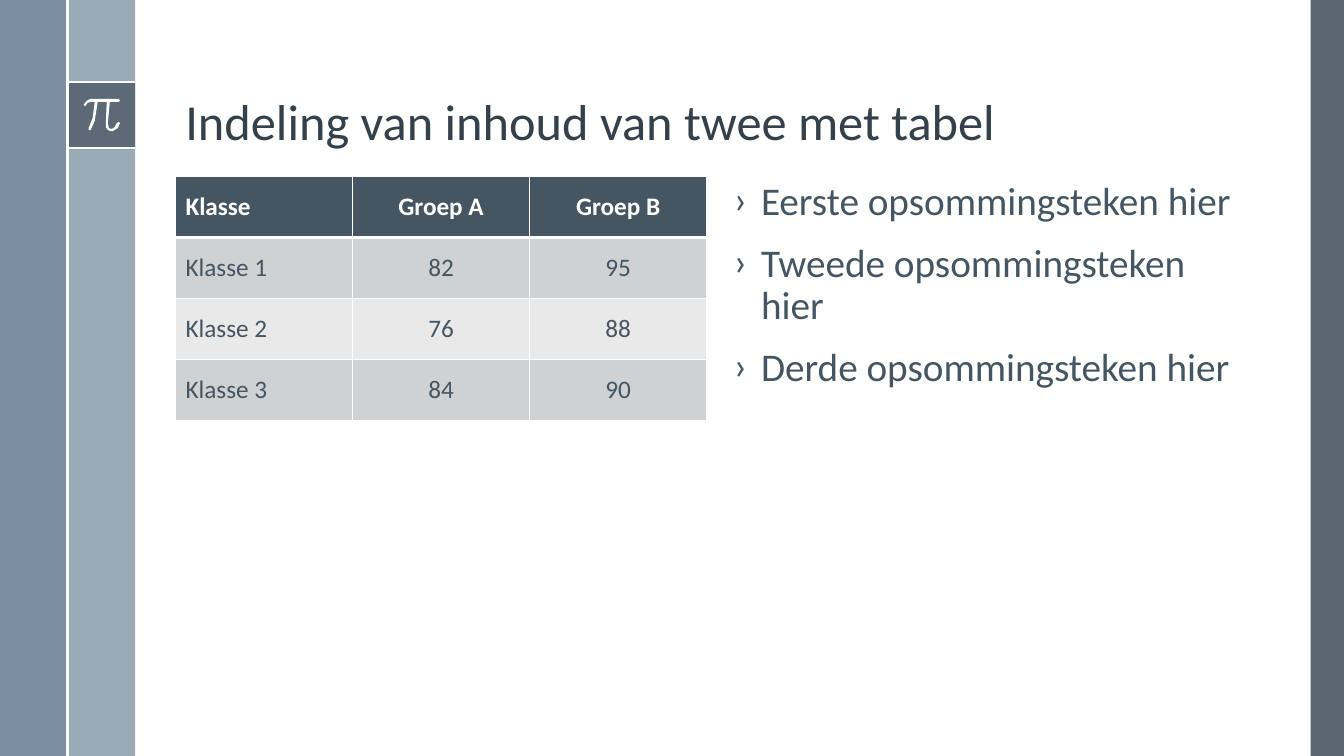
from lxml.etree import SubElement
from pptx import Presentation
from pptx.dml.color import RGBColor
from pptx.enum.shapes import MSO_CONNECTOR as Connector, MSO_SHAPE as Shape
from pptx.enum.text import MSO_ANCHOR as Anchor, PP_ALIGN as Align
from pptx.oxml.ns import qn
from pptx.util import Inches, Pt

WHITE = RGBColor(0xFF, 0xFF, 0xFF)
SLATE = RGBColor(0x47, 0x55, 0x62)
STEEL = RGBColor(0x6A, 0x80, 0x93)
MIST = RGBColor(0x9B, 0xAA, 0xB7)
TITLE = RGBColor(0x35, 0x40, 0x4A)
TEXT = RGBColor(0x46, 0x55, 0x62)
BAND_DARK = RGBColor(0xCF, 0xD1, 0xD3)
BAND_LIGHT = RGBColor(0xE9, 0xE9, 0xEA)

WIDTH, HEIGHT = 13.33, 7.5
STRIP = 0.67
SIGN_TOP = 0.81
CONTENT_LEFT, CONTENT_TOP, COLUMN_WIDTH = 1.74, 1.75, 5.27
BODY_LEFT = 7.18

PI_OUTLINE = [
    (1.18, 0.98), (0.9, 0.98), (0.86, 1), (0.83, 1.04), (0.84, 1.05),
    (0.85, 1.05), (0.87, 1.02), (0.9, 1.01), (0.94, 1.01), (0.92, 1.17),
    (0.88, 1.27), (0.88, 1.29), (0.9, 1.29), (0.94, 1.2), (0.97, 1.01),
    (1.06, 1.01), (1.05, 1.22), (1.05, 1.26), (1.07, 1.29), (1.1, 1.3),
    (1.12, 1.3), (1.17, 1.27), (1.19, 1.22), (1.18, 1.21), (1.16, 1.22),
    (1.14, 1.26), (1.11, 1.28), (1.08, 1.27), (1.07, 1.22), (1.09, 1.01),
    (1.18, 1.01), (1.19, 1),
]

SCORES = [
    ("Klasse", "Groep A", "Groep B"),
    ("Klasse 1", "82", "95"),
    ("Klasse 2", "76", "88"),
    ("Klasse 3", "84", "90"),
]

BULLETS = [
    "Eerste opsommingsteken hier",
    "Tweede opsommingsteken hier",
    "Derde opsommingsteken hier",
]


class SlideBuilder:
    font = "Calibri"

    def __init__(self, slide):
        self.slide = slide

    def paint(self, shape, color, opacity=100):
        shape.shadow.inherit = False
        shape.fill.solid()
        shape.fill.fore_color.rgb = color
        shape.line.fill.background()
        if opacity < 100:
            fill = shape.element.spPr.find(qn("a:solidFill"))
            SubElement(fill[0], qn("a:alpha"), val=str(opacity * 1000))

    def rectangle(self, left, top, width, height, color, opacity=100):
        shape = self.slide.shapes.add_shape(
            Shape.RECTANGLE, Inches(left), Inches(top), Inches(width), Inches(height))
        self.paint(shape, color, opacity)

    def outline(self, points, color):
        corners = [(Inches(x), Inches(y)) for x, y in points]
        builder = self.slide.shapes.build_freeform(*corners[0])
        builder.add_line_segments(corners[1:])
        self.paint(builder.convert_to_shape(), color)

    def line(self, x1, y1, x2, y2):
        connector = self.slide.shapes.add_connector(
            Connector.STRAIGHT, Inches(x1), Inches(y1), Inches(x2), Inches(y2))
        connector.line.color.rgb = WHITE
        connector.line.width = Pt(1.5)
        SubElement(connector.element.spPr, qn("a:effectLst"))

    def style(self, paragraph, size, color, bold=False):
        for run in paragraph.runs:
            run.font.name = self.font
            run.font.size = Pt(size)
            run.font.color.rgb = color
            run.font.bold = bold

    def text(self, left, top, width, height, lines, size, color,
             anchor=Anchor.TOP, bullet=None):
        box = self.slide.shapes.add_textbox(
            Inches(left), Inches(top), Inches(width), Inches(height))
        frame = box.text_frame
        frame.word_wrap = True
        frame.vertical_anchor = anchor
        frame.text = "\n".join(lines)
        for paragraph in frame.paragraphs:
            paragraph.line_spacing = 0.9
            self.style(paragraph, size, color)
            if bullet:
                self.bullet(paragraph, bullet)

    def bullet(self, paragraph, mark):
        paragraph.space_before = Pt(14)
        properties = paragraph._p.get_or_add_pPr()
        properties.set("marL", str(Inches(0.27)))
        properties.set("indent", str(-Inches(0.27)))
        SubElement(properties, qn("a:buFont"), typeface=self.font)
        SubElement(properties, qn("a:buChar"), char=mark)

    def borders(self, cell, top, bottom):
        properties = cell._tc.get_or_add_tcPr()
        for side, width in (("L", 1), ("R", 1), ("T", top), ("B", bottom)):
            border = SubElement(properties, qn(f"a:ln{side}"), w=str(Pt(width)))
            fill = SubElement(border, qn("a:solidFill"))
            SubElement(fill, qn("a:srgbClr"), val=str(WHITE))

    def table(self, left, top, width, row_height, rows):
        table = self.slide.shapes.add_table(
            len(rows), len(rows[0]), Inches(left), Inches(top),
            Inches(width), Inches(row_height * len(rows))).table
        for row_index, values in enumerate(rows):
            header = row_index == 0
            band = BAND_DARK if row_index % 2 else BAND_LIGHT
            for column_index, value in enumerate(values):
                cell = table.cell(row_index, column_index)
                self.borders(cell, 3 if row_index == 1 else 1, 3 if header else 1)
                cell.fill.solid()
                cell.fill.fore_color.rgb = TEXT if header else band
                cell.vertical_anchor = Anchor.MIDDLE
                cell.text_frame.text = value
                paragraph = cell.text_frame.paragraphs[0]
                paragraph.alignment = Align.CENTER if column_index else Align.LEFT
                self.style(paragraph, 18, WHITE if header else TEXT, header)


def main():
    presentation = Presentation()
    presentation.slide_width = Inches(WIDTH)
    presentation.slide_height = Inches(HEIGHT)
    builder = SlideBuilder(presentation.slides.add_slide(presentation.slide_layouts[6]))

    builder.rectangle(13, 0, WIDTH - 13, HEIGHT, SLATE, 90)
    builder.rectangle(STRIP, 0, STRIP, HEIGHT, MIST)
    builder.rectangle(0, 0, STRIP, HEIGHT, STEEL, 88)
    builder.rectangle(STRIP, SIGN_TOP, STRIP, STRIP, SLATE, 75)
    for y in (SIGN_TOP, SIGN_TOP + STRIP - 0.01):
        builder.line(STRIP, y, 2 * STRIP, y)
    builder.outline(PI_OUTLINE, WHITE)
    builder.line(STRIP, 0, STRIP, HEIGHT)

    builder.text(CONTENT_LEFT, 0.19, 10.7, 1.36,
                 ["Indeling van inhoud van twee met tabel"], 36, TITLE, Anchor.BOTTOM)
    builder.table(CONTENT_LEFT, CONTENT_TOP, COLUMN_WIDTH, 0.605, SCORES)
    builder.text(BODY_LEFT, CONTENT_TOP, COLUMN_WIDTH, 5, BULLETS, 28, TEXT, bullet="›")
    presentation.save("out.pptx")


if __name__ == "__main__":
    main()
